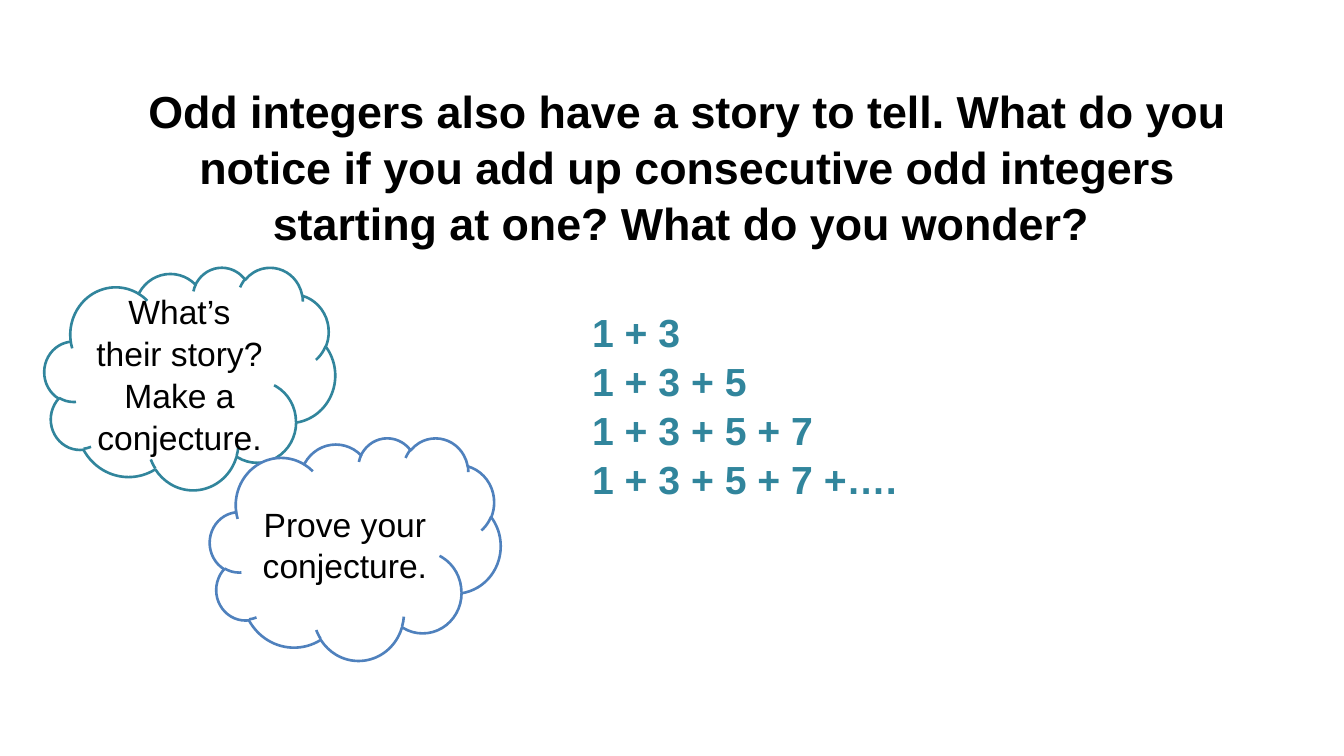
from dataclasses import dataclass

from pptx import Presentation
from pptx.dml.color import RGBColor
from pptx.enum.shapes import MSO_SHAPE
from pptx.enum.text import MSO_ANCHOR, MSO_AUTO_SIZE, PP_ALIGN
from pptx.shapes.autoshape import Shape
from pptx.slide import Slide
from pptx.util import Inches, Length, Pt

CLOUD = MSO_SHAPE.CLOUD
TOP = MSO_ANCHOR.TOP
MIDDLE = MSO_ANCHOR.MIDDLE
NO_AUTOFIT = MSO_AUTO_SIZE.NONE
LEFT = PP_ALIGN.LEFT
CENTER = PP_ALIGN.CENTER

SLIDE_WIDTH = 16
SLIDE_HEIGHT = 9
COLUMN = SLIDE_WIDTH / 100
ROW = SLIDE_HEIGHT / 100
TITLE_ONLY = 5
FONT = "Arial"
LINE_SPACING = 1.04
BLACK = "000000"
WHITE = "FFFFFF"
TEAL = "31859C"
BLUE = "4F81BD"


@dataclass(frozen=True)
class Area:
    column: float
    row: float
    columns: float
    rows: float

    def lengths(self) -> tuple[Length, Length, Length, Length]:
        return (
            Inches(self.column * COLUMN),
            Inches(self.row * ROW),
            Inches(self.columns * COLUMN),
            Inches(self.rows * ROW),
        )


@dataclass(frozen=True)
class TextStyle:
    size: float
    color: str
    bold: bool
    alignment: PP_ALIGN
    anchor: MSO_ANCHOR
    wrap: bool = True


@dataclass(frozen=True)
class Cloud:
    text: str
    outline: str


TITLE_AREA = Area(10.19, 10.22, 81.88, 22.67)
SUMS_AREA = Area(43.44, 40, 24.19, 32.56)
FIRST_CLOUD_AREA = Area(3.31, 35.33, 21.63, 29.44)
CLOUD_COLUMN_STEP = 12.31
CLOUD_ROW_STEP = 22.56

TITLE_STYLE = TextStyle(38.4, BLACK, True, CENTER, TOP)
SUMS_STYLE = TextStyle(33.6, TEAL, True, LEFT, TOP, wrap=False)
CLOUD_STYLE = TextStyle(28.8, BLACK, False, CENTER, MIDDLE)

TITLE = (
    "Odd integers also have a story to tell. What do you notice if you add up "
    "consecutive odd integers starting at one? What do you wonder? "
)
SUMS = ["1 + 3", "1 + 3 + 5", "1 + 3 + 5 + 7", "1 + 3 + 5 + 7 +…."]
CLOUDS = [
    Cloud("What’s their story? Make a conjecture. ", TEAL),
    Cloud("Prove your conjecture. ", BLUE),
]


def rgb(value: str) -> RGBColor:
    return RGBColor.from_string(value)


def write(shape: Shape, lines: list[str], style: TextStyle) -> None:
    frame = shape.text_frame
    frame.auto_size = NO_AUTOFIT
    frame.word_wrap = style.wrap
    frame.vertical_anchor = style.anchor
    frame.margin_left = frame.margin_right = Inches(0.1)
    frame.margin_top = frame.margin_bottom = Inches(0.05)
    for index, line in enumerate(lines):
        paragraph = frame.add_paragraph() if index else frame.paragraphs[0]
        paragraph.alignment = style.alignment
        paragraph.line_spacing = LINE_SPACING
        paragraph.space_before = Pt(0)
        run = paragraph.add_run()
        run.text = line
        run.font.name = FONT
        run.font.size = Pt(style.size)
        run.font.bold = style.bold
        run.font.color.rgb = rgb(style.color)


def place_title(slide: Slide) -> None:
    title = slide.shapes.title
    title.left, title.top, title.width, title.height = TITLE_AREA.lengths()
    write(title, [TITLE], TITLE_STYLE)


def draw_cloud(slide: Slide, cloud: Cloud, area: Area) -> None:
    shape = slide.shapes.add_shape(CLOUD, *area.lengths())
    shape.shadow.inherit = False
    shape.fill.solid()
    shape.fill.fore_color.rgb = rgb(WHITE)
    shape.line.color.rgb = rgb(cloud.outline)
    shape.line.width = Pt(2.25)
    write(shape, [cloud.text], CLOUD_STYLE)


def main() -> None:
    presentation = Presentation()
    presentation.slide_width = Inches(SLIDE_WIDTH)
    presentation.slide_height = Inches(SLIDE_HEIGHT)
    slide = presentation.slides.add_slide(presentation.slide_layouts[TITLE_ONLY])

    place_title(slide)
    write(slide.shapes.add_textbox(*SUMS_AREA.lengths()), SUMS, SUMS_STYLE)
    for index, cloud in enumerate(CLOUDS):
        area = Area(
            FIRST_CLOUD_AREA.column + index * CLOUD_COLUMN_STEP,
            FIRST_CLOUD_AREA.row + index * CLOUD_ROW_STEP,
            FIRST_CLOUD_AREA.columns,
            FIRST_CLOUD_AREA.rows,
        )
        draw_cloud(slide, cloud, area)

    presentation.save("out.pptx")


if __name__ == "__main__":
    main()
